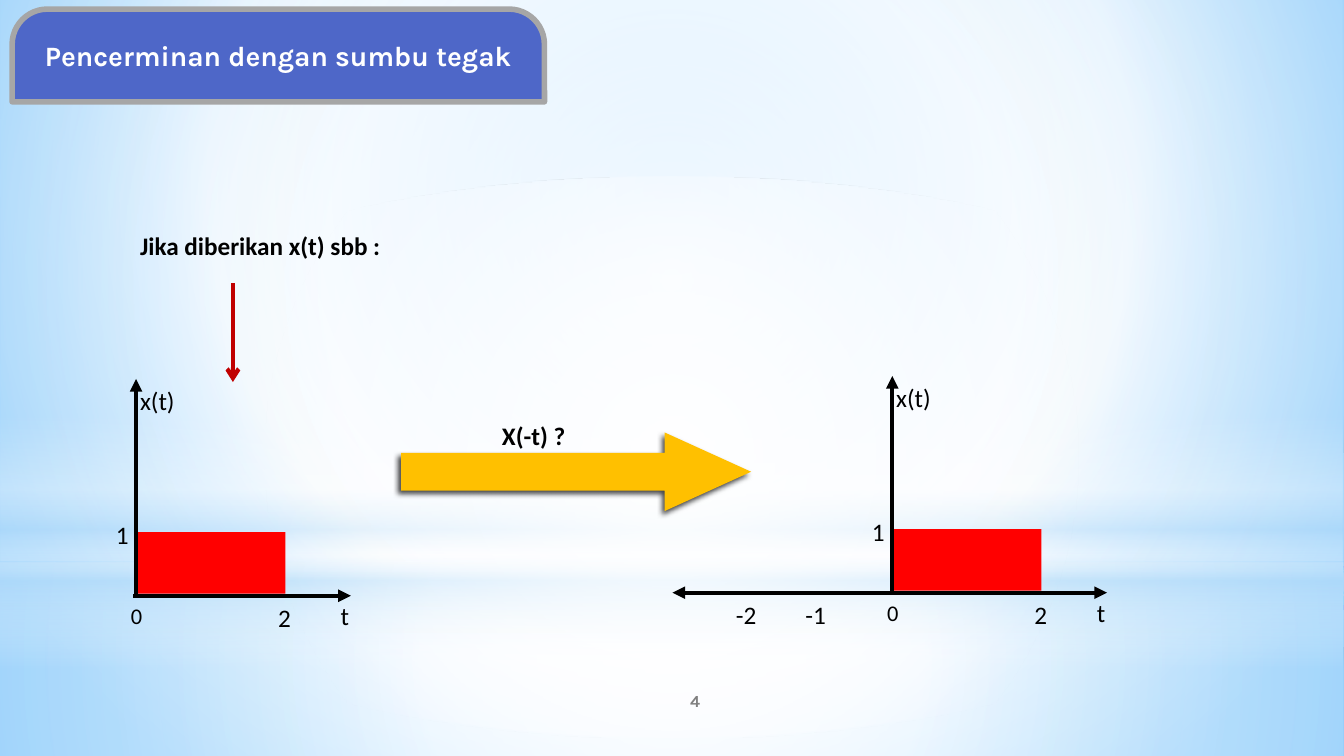
from lxml import etree
from pptx import Presentation
from pptx.dml.color import RGBColor
from pptx.enum.shapes import MSO_CONNECTOR, MSO_SHAPE
from pptx.enum.text import MSO_ANCHOR, PP_ALIGN
from pptx.oxml.ns import qn
from pptx.util import Inches, Pt

RECT = MSO_SHAPE.RECTANGLE
CENTER, MIDDLE = PP_ALIGN.CENTER, MSO_ANCHOR.MIDDLE
WIDTH, HEIGHT = 13.33, 7.5
COLORS = {
    "ink": "000000", "white": "FFFFFF", "pulse": "FF0000", "pointer": "C00000",
    "arrow": "FFC000", "banner": "4E67C8", "frame": "A6A6A6", "number": "808080",
    "sky": "9ED5FF", "deep": "5BB9FF", "haze": "B4DCFA",
}


def rgb(name):
    return RGBColor.from_string(COLORS[name])


def add_color(parent, name, alpha):
    color = etree.SubElement(parent, qn("a:srgbClr"), val=COLORS[name])
    if alpha < 100:
        etree.SubElement(color, qn("a:alpha"), val=str(alpha * 1000))


def set_gradient(holder, stops, center=None):
    """Swap the solid fill in holder for a radial gradient, or a vertical one without center."""
    gradient = etree.Element(qn("a:gradFill"), rotWithShape="1")
    stop_list = etree.SubElement(gradient, qn("a:gsLst"))
    for position, name, alpha in stops:
        stop = etree.SubElement(stop_list, qn("a:gs"), pos=str(position * 1000))
        add_color(stop, name, alpha)
    if center:
        radial = etree.SubElement(gradient, qn("a:path"), path="circle")
        sides = {side: str(share * 1000) for side, share in zip("ltrb", center)}
        etree.SubElement(radial, qn("a:fillToRect"), **sides)
    else:
        etree.SubElement(gradient, qn("a:lin"), ang="5400000", scaled="0")
    solid = holder.find(qn("a:solidFill"))
    holder.replace(solid, gradient)


def add_block(slide, kind, box, color):
    block = slide.shapes.add_shape(kind, *map(Inches, box))
    block.shadow.inherit = False
    block.fill.solid()
    block.fill.fore_color.rgb = rgb(color)
    block.line.fill.background()
    return block


def add_label(slide, text, box, size=18, bold=False, wrap=False):
    label = slide.shapes.add_textbox(*map(Inches, box))
    label.text_frame.word_wrap = wrap
    line = label.text_frame.paragraphs[0]
    line.text = text
    style_line(line, size, "ink", bold, "Calibri")
    return label


def style_line(line, size, color, bold, face):
    line.font.size, line.font.bold, line.font.name = Pt(size), bold, face
    line.font.color.rgb = rgb(color)


def add_arrow(slide, start, end, color="ink", head="triangle"):
    arrow = slide.shapes.add_connector(
        MSO_CONNECTOR.STRAIGHT, *map(Inches, (*start, *end)))
    arrow.line.width = Pt(3)
    arrow.line.color.rgb = rgb(color)
    etree.SubElement(arrow.line._get_or_add_ln(), qn("a:tailEnd"), type=head)
    etree.SubElement(arrow._element.spPr, qn("a:effectLst"))


def draw_backdrop(slide):
    slide.background.fill.solid()
    set_gradient(slide.element.find(".//" + qn("p:bgPr")),
                 [(0, "sky", 100), (60, "white", 100), (100, "deep", 100)],
                 (20, 10, 20, 60))
    middle = (50, 50, 50, 50)
    horizon = 5.58
    layers = [
        (RECT, horizon, HEIGHT - horizon, middle,
         [(0, "white", 91), (37, "white", 76), (100, "haze", 79)]),
        (RECT, 0, horizon, middle,
         [(0, "white", 89), (48, "white", 62), (100, "haze", 79)]),
        (RECT, 4.12, 2.5, None,
         [(0, "white", 0), (29, "white", 30), (45, "haze", 40),
          (55, "white", 26), (65, "haze", 60), (100, "white", 0)]),
        (MSO_SHAPE.OVAL, 1.75, horizon, middle,
         [(0, "white", 100), (56, "white", 0)]),
    ]
    for kind, top, height, center, stops in layers:
        layer = add_block(slide, kind, (0, top, WIDTH, height), "white")
        set_gradient(layer._element.spPr, stops, center)


def draw_banner(slide, box):
    banner = add_block(slide, MSO_SHAPE.ROUND_2_SAME_RECTANGLE, box, "banner")
    banner.adjustments[0], banner.adjustments[1] = 0.38, 0
    banner.line.color.rgb = rgb("frame")
    banner.line.width = Pt(4)

    title = slide.shapes.title
    title.left, title.top, title.width, title.height = map(Inches, box)
    title.text_frame.text = "Pencerminan dengan sumbu tegak"
    title.text_frame.vertical_anchor = MIDDLE
    heading = title.text_frame.paragraphs[0]
    heading.alignment = CENTER
    style_line(heading, 20, "white", True, "Karla")
    # The title lies above the banner
    slide.shapes._spTree.append(title._element)


def draw_signal(slide, x, y, negative_side=False):
    """Draw the pulse x(t) on axes whose origin is at (x, y)."""
    add_block(slide, RECT, (x + 0.01, y - 0.63, 1.47, 0.61), "pulse")
    add_arrow(slide, (x - 0.03, y), (x + 2.13, y))
    add_arrow(slide, (x, y), (x, y - 2.15))
    marks = [("t", 1.93, 0, 0.37, 18), ("x(t)", -0.06, -2.14, 0.55, 18),
             ("1", -0.3, -0.81, 0.33, 18), ("0", -0.15, 0.01, 0.32, 16),
             ("2", 1.31, 0.02, 0.33, 18)]
    if negative_side:
        add_arrow(slide, (x, y), (x - 2.18, y))
        marks += [("-1", -0.96, 0.02, 0.41, 18), ("-2", -1.65, 0.02, 0.41, 18)]
    for text, dx, dy, width, size in marks:
        add_label(slide, text, (x + dx, y + dy, width, 0.4), size)


def draw_question(slide, box):
    left, top, _, _ = box
    arrow = add_block(slide, MSO_SHAPE.RIGHT_ARROW, box, "arrow")
    arrow.adjustments[0], arrow.adjustments[1] = 0.48, 1.1
    effects = arrow._element.spPr.find(qn("a:effectLst"))
    shadow = etree.SubElement(effects, qn("a:outerShdw"), blurRad=str(Pt(4)),
                              dist=str(Pt(3)), dir=str(135 * 60000))
    add_color(shadow, "ink", 73)
    add_label(slide, "X(-t) ?", (left + 0.9, top - 0.17, 0.84, 0.4), bold=True)


def draw_premise(slide, x, y):
    add_label(slide, "Jika diberikan x(t) sbb :", (x, y, 2.61, 0.4), bold=True)
    add_arrow(slide, (x + 1.02, y + 0.57), (x + 1.02, y + 1.55), "pointer", "arrow")


def draw_page_number(slide, box):
    number = add_label(slide, "4", box, wrap=True)
    number.text_frame.vertical_anchor = MIDDLE
    line = number.text_frame.paragraphs[0]
    line.alignment = CENTER
    style_line(line, 12, "number", True, "Karla")


def main():
    deck = Presentation()
    deck.slide_width, deck.slide_height = Inches(WIDTH), Inches(HEIGHT)
    slide = deck.slides.add_slide(deck.slide_layouts[5])
    draw_backdrop(slide)
    draw_signal(slide, 1.35, 5.91)
    draw_signal(slide, 8.85, 5.88, negative_side=True)
    draw_question(slide, (3.98, 4.29, 3.47, 0.78))
    draw_premise(slide, 1.29, 2.24)
    draw_banner(slide, (0.12, 0.09, 5.28, 0.92))
    draw_page_number(slide, (5.56, 6.75, 2.67, 0.4))
    deck.save("out.pptx")


if __name__ == "__main__":
    main()
